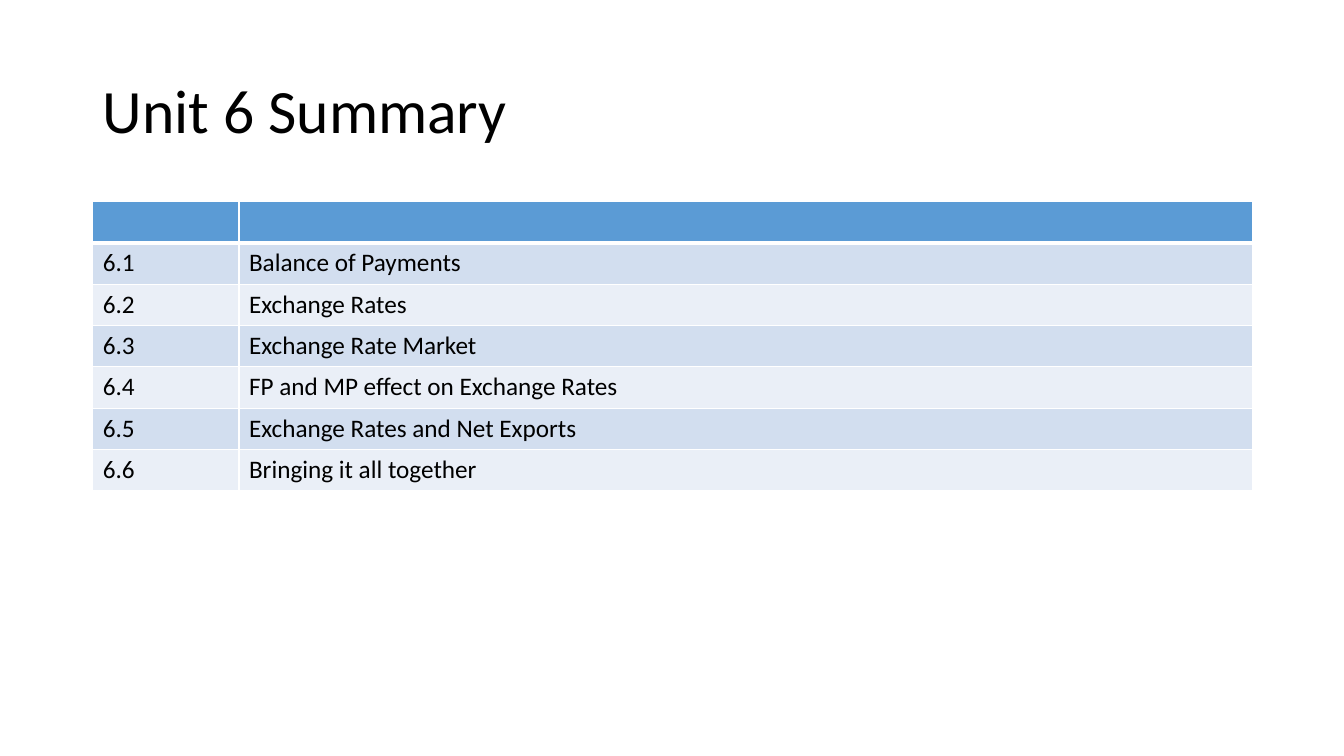
import pptx
import pptx.dml.color
import pptx.enum.text
import pptx.util
from lxml import etree

WIDTH, HEIGHT = 13.33, 7.5
LEFT, CONTENT_WIDTH = 0.92, 11.5
ROW_HEIGHT = 0.41
COLUMN_WIDTHS = (1.45, 10.05)
FONT = "Calibri"
BLACK, WHITE = "000000", "FFFFFF"
HEADER_FILL = "5B9BD5"
BAND_FILLS = ("D2DEEF", "EAEFF7")
TOPICS = (
    "Balance of Payments",
    "Exchange Rates",
    "Exchange Rate Market",
    "FP and MP effect on Exchange Rates",
    "Exchange Rates and Net Exports",
    "Bringing it all together",
)
DRAWING = "http://schemas.openxmlformats.org/drawingml/2006/main"


def inches(*lengths):
    return [pptx.util.Inches(length) for length in lengths]


def set_color(color_format, color):
    color_format.rgb = pptx.dml.color.RGBColor.from_string(color)


def add_span(para, text, size):
    span = para.add_run()
    span.text = text
    span.font.name = FONT
    span.font.size = pptx.util.Pt(size)
    span.font.bold = False
    set_color(span.font.color, BLACK)


def fill_cell(cell, color):
    cell.fill.solid()
    set_color(cell.fill.fore_color, color)


def border_cell(cell, bottom):
    """Draw white edges of 1 pt, with the bottom edge as wide as given."""
    properties = cell._tc.get_or_add_tcPr()
    edges = {"lnL": 1, "lnR": 1, "lnT": 1, "lnB": bottom}
    for position, (edge, points) in enumerate(edges.items()):
        line = etree.Element(f"{{{DRAWING}}}{edge}", w=str(pptx.util.Pt(points)))
        solid = etree.SubElement(line, f"{{{DRAWING}}}solidFill")
        etree.SubElement(solid, f"{{{DRAWING}}}srgbClr", val=WHITE)
        properties.insert(position, line)


def format_title(slide, text):
    title = slide.shapes.title
    title.left, title.top, title.width, title.height = inches(
        LEFT, 0.4, CONTENT_WIDTH, 1.45)
    frame = title.text_frame
    frame.word_wrap = True
    frame.auto_size = pptx.enum.text.MSO_AUTO_SIZE.NONE
    frame.vertical_anchor = pptx.enum.text.MSO_ANCHOR.MIDDLE
    para = frame.paragraphs[0]
    para.alignment = pptx.enum.text.PP_ALIGN.LEFT
    para.line_spacing = 0.9
    add_span(para, text, 44)


def add_topic_table(slide, topics):
    rows = [("", "")]
    rows += [(f"6.{number}", topic) for number, topic in enumerate(topics, 1)]
    table = slide.shapes.add_table(
        len(rows), len(COLUMN_WIDTHS),
        *inches(LEFT, 2, CONTENT_WIDTH, ROW_HEIGHT * len(rows))).table
    for column, width in zip(table.columns, COLUMN_WIDTHS):
        column.width = pptx.util.Inches(width)
    for index, texts in enumerate(rows):
        table.rows[index].height = pptx.util.Inches(ROW_HEIGHT)
        for column, text in enumerate(texts):
            cell = table.cell(index, column)
            fill_cell(cell, BAND_FILLS[(index - 1) % 2] if index else HEADER_FILL)
            border_cell(cell, bottom=1 if index else 3)
            if text:
                add_span(cell.text_frame.paragraphs[0], text, 18)


def main():
    deck = pptx.Presentation()
    deck.slide_width, deck.slide_height = inches(WIDTH, HEIGHT)
    slide = deck.slides.add_slide(deck.slide_layouts.get_by_name("Title Only"))
    format_title(slide, "Unit 6 Summary")
    add_topic_table(slide, TOPICS)
    deck.save("out.pptx")


if __name__ == "__main__":
    main()
